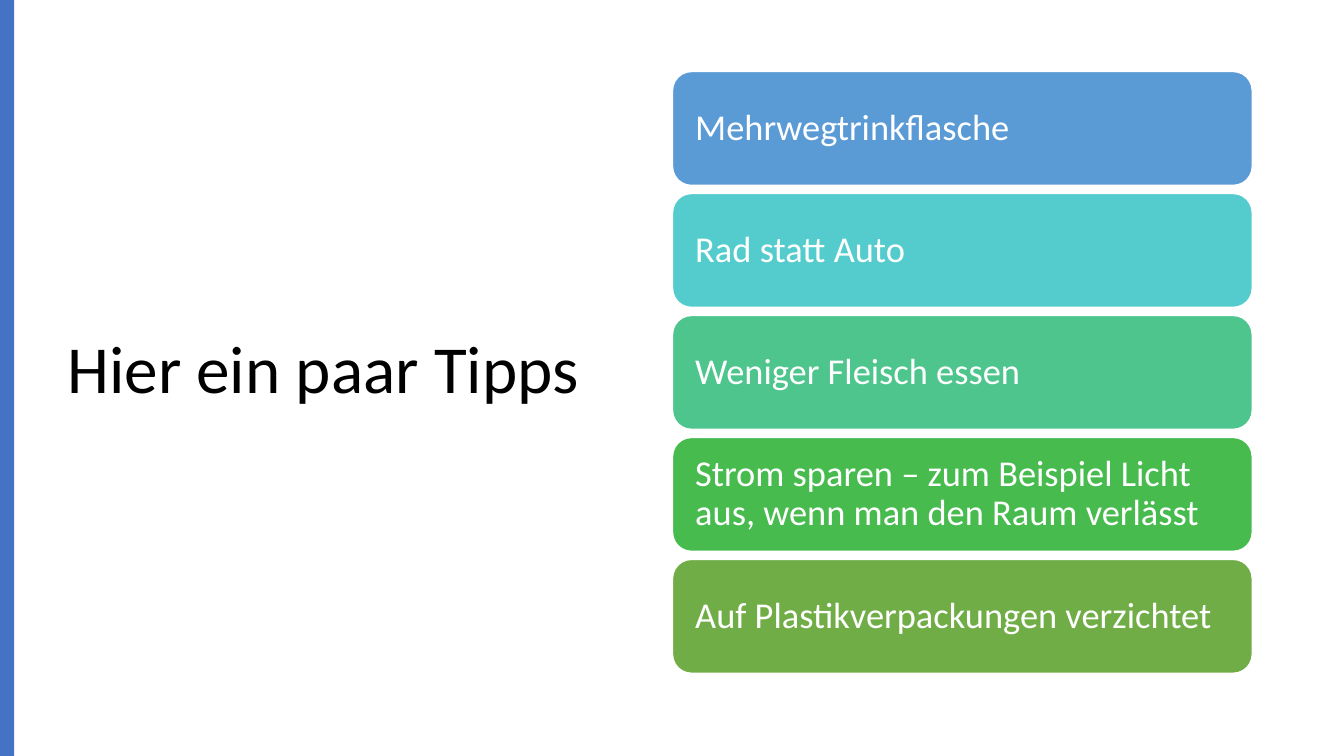
from dataclasses import dataclass

from pptx import Presentation
from pptx.dml.color import RGBColor
from pptx.enum.shapes import MSO_SHAPE as Preset
from pptx.enum.text import MSO_ANCHOR as Anchor, PP_ALIGN as Align
from pptx.shapes.autoshape import Shape
from pptx.slide import Slide
from pptx.util import Emu, Pt

EMU_PER_PX = 9144  # 100 px to the inch
SLIDE_WIDTH, SLIDE_HEIGHT = 1333, 750
TIP_LEFT, TIP_TOP, TIP_WIDTH, TIP_HEIGHT = 667, 71, 575, 113
TIP_PITCH = 121
TIP_INSET = 17

COLORS = {
    "white": "FFFFFF",
    "black": "000000",
    "stripe": "4472C4",
    "blue": "5B9BD5",
    "turquoise": "54CCCD",
    "mint": "4DC58D",
    "green": "48BB4F",
    "olive": "70AD47",
}


@dataclass(frozen=True)
class Tip:
    text: str
    color: str


TIPS = [
    Tip("Mehrwegtrinkflasche", "blue"),
    Tip("Rad statt Auto", "turquoise"),
    Tip("Weniger Fleisch essen", "mint"),
    Tip("Strom sparen – zum Beispiel Licht aus, wenn man den Raum verlässt", "green"),
    Tip("Auf Plastikverpackungen verzichtet", "olive"),
]


def px(length: int) -> Emu:
    return Emu(length * EMU_PER_PX)


def rgb(name: str) -> RGBColor:
    return RGBColor.from_string(COLORS[name])


def write(shape: Shape, text: str, size: int, color: str, inset: int) -> None:
    """Put one left-aligned, vertically centred paragraph into the shape."""
    frame = shape.text_frame
    frame.word_wrap = True
    frame.vertical_anchor = Anchor.MIDDLE
    frame.margin_left = frame.margin_right = px(inset)
    frame.margin_top = frame.margin_bottom = px(inset)
    paragraph = frame.paragraphs[0]
    paragraph.text = text
    paragraph.alignment = Align.LEFT
    paragraph.line_spacing = 0.9
    paragraph.font.name = "Calibri"
    paragraph.font.size = Pt(size)
    paragraph.font.color.rgb = rgb(color)


def add_filled(slide: Slide, preset: Preset, color: str,
               left: int, top: int, width: int, height: int) -> Shape:
    shape = slide.shapes.add_shape(preset, px(left), px(top), px(width), px(height))
    shape.shadow.inherit = False
    shape.fill.solid()
    shape.fill.fore_color.rgb = rgb(color)
    shape.line.fill.background()
    return shape


def add_tip(slide: Slide, tip: Tip, row: int) -> None:
    card = add_filled(slide, Preset.ROUNDED_RECTANGLE, tip.color, TIP_LEFT,
                      TIP_TOP + row * TIP_PITCH, TIP_WIDTH, TIP_HEIGHT)
    card.line.color.rgb = rgb("white")
    card.line.width = Pt(1)
    write(card, tip.text, 26, "white", TIP_INSET)


def main() -> None:
    deck = Presentation()
    deck.slide_width, deck.slide_height = px(SLIDE_WIDTH), px(SLIDE_HEIGHT)
    slide = deck.slides.add_slide(deck.slide_layouts[6])

    heading = slide.shapes.add_textbox(px(57), px(68), px(567), px(602))
    write(heading, "Hier ein paar Tipps", 48, "black", 10)
    add_filled(slide, Preset.RECTANGLE, "stripe", 0, 0, 14, SLIDE_HEIGHT)
    for row, tip in enumerate(TIPS):
        add_tip(slide, tip, row)

    deck.save("out.pptx")


if __name__ == "__main__":
    main()
